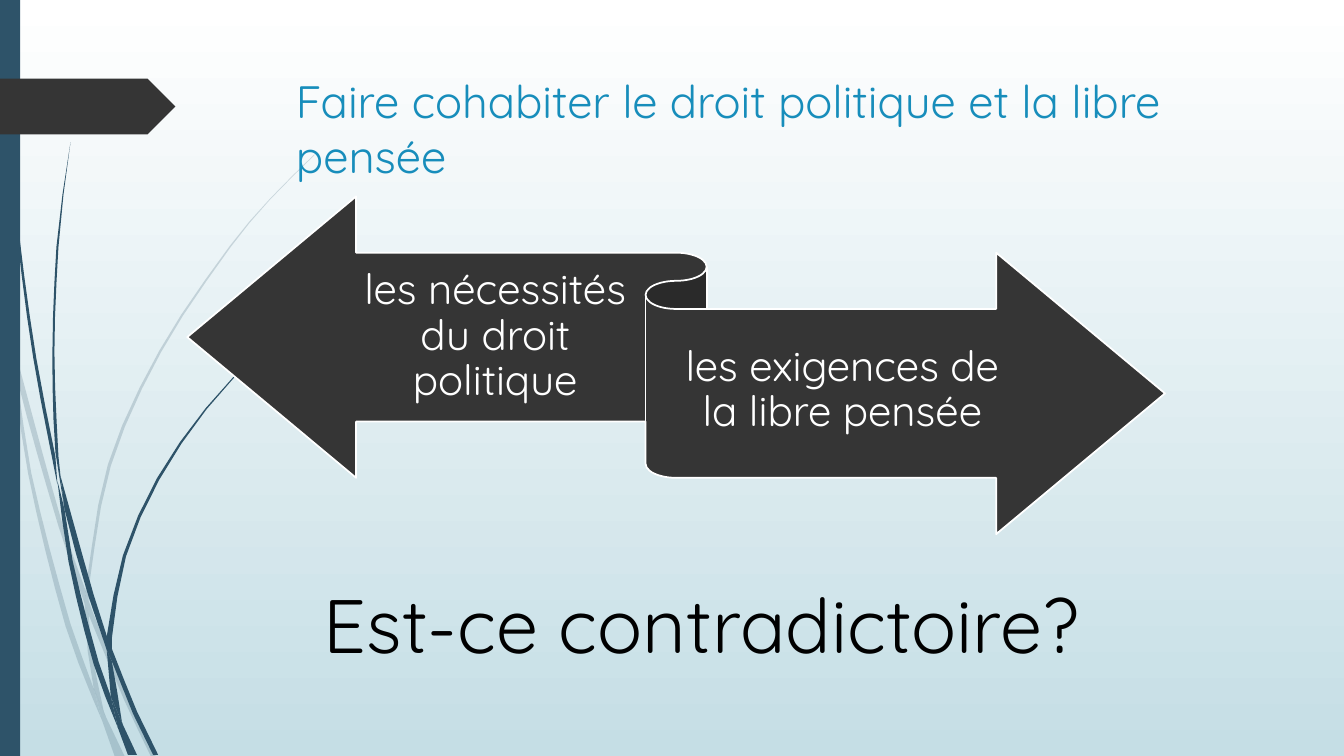
from dataclasses import dataclass
from itertools import pairwise
from math import dist

from lxml import etree
from pptx import Presentation
from pptx import util as u
from pptx.dml.color import RGBColor
from pptx.enum import shapes, text
from pptx.oxml import ns


@dataclass(frozen=True)
class Theme:
    font: str = "Quicksand"
    sky_top: str = "FFFFFF"
    sky_bottom: str = "C5DEE5"
    stem: str = "2E5369"
    dark: str = "353535"
    title: str = "178DBB"
    light: str = "FFFFFF"
    ink: str = "000000"
    title_size: float = 32.4
    arrow_size: float = 30
    question_size: float = 54
    faint_alpha: int = 20


THEME = Theme()
GRASS_UNIT = u.Cm(0.0254)
CURVE_STEP = 40

# Each blade has two sides, out and back, in grass units
FAINT_BLADES = [
    ([(11, 350), (9, 322), (0, 282)], [(0, 299), (10, 344)]),
    ([(14, 345), (17, 376), (58, 522), (84, 599)], [(85, 586), (62, 520), (14, 345)]),
    ([(88, 610), (123, 694), (150, 751)], [(155, 751), (127, 692), (92, 607), (88, 596)]),
    ([(11, 350), (28, 470), (65, 621), (92, 693), (101, 714)],
     [(99, 707), (93, 683), (70, 619), (31, 469), (17, 376), (11, 350)]),
    ([(84, 599), (87, 646), (93, 683), (105, 711)], [(103, 706), (91, 646), (88, 610), (84, 599)]),
    ([(88, 610), (84, 599), (85, 584), (107, 461), (158, 348), (228, 244), (268, 197), (312, 153)],
     [(312, 154), (268, 198), (229, 245), (160, 349), (110, 462), (88, 584), (88, 610)]),
    ([(93, 683), (101, 714), (114, 751)], [(124, 751), (105, 711), (93, 683)]),
]
SOLID_BLADES = [
    ([(3, 0), (7, 110), (17, 233), (33, 355), (57, 481)],
     [(55, 453), (36, 355), (19, 232), (8, 109), (4, 0)]),
    ([(60, 472), (64, 505), (88, 592), (106, 645)], [(106, 631), (93, 590), (60, 472)]),
    ([(110, 641), (111, 656), (132, 708), (152, 749)], [(157, 749), (136, 706), (110, 641)]),
    ([(57, 477), (68, 557), (93, 659), (117, 722)],
     [(110, 691), (98, 657), (72, 556), (64, 505), (57, 477)]),
    ([(70, 141), (62, 193), (56, 245), (52, 349), (55, 449), (64, 505)],
     [(60, 472), (58, 453), (54, 349), (58, 245), (63, 193), (70, 141)]),
    ([(111, 656), (106, 645), (106, 631), (122, 551), (156, 474), (204, 405), (260, 344)],
     [(261, 344), (205, 406), (158, 476), (125, 552), (111, 633), (111, 656)]),
    ([(106, 645), (110, 691), (122, 719)], [(121, 716), (111, 656), (106, 645)]),
    ([(110, 691), (117, 722), (127, 749)], [(136, 749), (122, 719), (110, 691)]),
]


def rgb(colour):
    return RGBColor.from_string(colour)


def paint(shape, fill, line=None):
    shape.shadow.inherit = False
    shape.fill.solid()
    shape.fill.fore_color.rgb = rgb(fill)
    if line:
        shape.line.color.rgb = rgb(line)
        shape.line.width = u.Pt(1.25)
    else:
        shape.line.fill.background()


def write(slide, box, words, size, colour, align=text.PP_ALIGN.LEFT, wrap=True):
    frame = slide.shapes.add_textbox(*box).text_frame
    frame.word_wrap = wrap
    line = frame.paragraphs[0]
    line.text = words
    line.alignment = align
    line.font.name = THEME.font
    line.font.size = u.Pt(size)
    line.font.color.rgb = rgb(colour)
    return frame


def smooth_side(points):
    """Points along a smooth curve through the given ones."""
    slopes = []
    for i in range(len(points)):
        near = points[max(i - 1, 0):i + 2]
        length = sum(dist(a, b) for a, b in pairwise(near))
        slopes.append([(near[-1][k] - near[0][k]) / length for k in (0, 1)])
    curve = [points[0]]
    for (a, b), (slope_a, slope_b) in zip(pairwise(points), pairwise(slopes)):
        span = dist(a, b)
        steps = max(1, round(span / CURVE_STEP))
        for step in range(1, steps + 1):
            t = step / steps
            rise = t * t * (3 - 2 * t)
            lead, trail = t * (1 - t) ** 2 * span, t * t * (t - 1) * span
            curve.append(tuple(a[k] + rise * (b[k] - a[k]) + lead * slope_a[k] + trail * slope_b[k]
                               for k in (0, 1)))
    return curve


def add_grass(slide, left, top, blades, alpha=None):
    for sides in blades:
        outline = [(left + x * GRASS_UNIT, top + y * GRASS_UNIT)
                   for side in sides for x, y in smooth_side(side)]
        builder = slide.shapes.build_freeform(*outline[0])
        builder.add_line_segments(outline[1:], close=True)
        blade = builder.convert_to_shape()
        paint(blade, THEME.stem)
        if alpha:
            tint = blade.element.spPr.find(".//" + ns.qn("a:srgbClr"))
            etree.SubElement(tint, ns.qn("a:alpha"), val=str(alpha * 1000))


def add_backdrop(slide, left, top, height):
    # Sky fading downwards
    sky = slide.background.fill
    sky.gradient()
    sky.gradient_angle = 270
    for stop, colour, place in zip(sky.gradient_stops, (THEME.sky_top, THEME.sky_bottom), (0, 1)):
        stop.color.rgb = rgb(colour)
        stop.position = place
    # Grass, side bar and page tag
    add_grass(slide, left, top, FAINT_BLADES, THEME.faint_alpha)
    add_grass(slide, left, top, SOLID_BLADES)
    bar = slide.shapes.add_shape(shapes.MSO_SHAPE.RECTANGLE, left, top, u.Cm(0.51), height)
    paint(bar, THEME.stem)
    tag = slide.shapes.add_shape(shapes.MSO_SHAPE.PENTAGON, left, top + u.Cm(1.98), u.Cm(4.42), u.Cm(1.41))
    paint(tag, THEME.dark)


def add_opposition(slide, left, top, width, height):
    ribbon = slide.shapes.add_shape(shapes.MSO_SHAPE.LEFT_RIGHT_RIBBON, left, top, width, height)
    paint(ribbon, THEME.dark, THEME.light)
    # Label places as shares of the ribbon: left, top, width
    labels = [("les nécessités du droit politique", 0.17, 0.17, 0.29),
              ("les exigences de la libre pensée", 0.5, 0.33, 0.34)]
    for words, x, y, share in labels:
        box = (left + int(x * width), top + int(y * height), int(share * width), int(0.49 * height))
        frame = write(slide, box, words, THEME.arrow_size, THEME.light, text.PP_ALIGN.CENTER)
        frame.vertical_anchor = text.MSO_ANCHOR.MIDDLE
        frame.margin_left = frame.margin_right = 0
        frame.margin_top = frame.margin_bottom = u.Cm(0.3)
        frame.paragraphs[0].line_spacing = 0.9


def add_question(slide, *box):
    frame = write(slide, box, "Est-ce contradictoire?", THEME.question_size, THEME.ink,
                  text.PP_ALIGN.CENTER, wrap=False)
    frame.auto_size = text.MSO_AUTO_SIZE.SHAPE_TO_FIT_TEXT


def main():
    deck = Presentation()
    deck.slide_width, deck.slide_height = u.Cm(33.87), u.Cm(19.05)
    slide = deck.slides.add_slide(deck.slide_layouts[6])
    add_backdrop(slide, 0, 0, deck.slide_height)
    title_box = (u.Cm(7.21), u.Cm(1.73), u.Cm(24.77), u.Cm(3.56))
    write(slide, title_box, "Faire cohabiter le droit politique et la libre pensée",
          THEME.title_size, THEME.title)
    add_opposition(slide, u.Cm(4.72), u.Cm(4.95), u.Cm(24.64), u.Cm(8.51))
    add_question(slide, u.Cm(7.16), u.Cm(14.43), u.Cm(21.03), u.Cm(2.57))
    deck.save("out.pptx")


if __name__ == "__main__":
    main()
